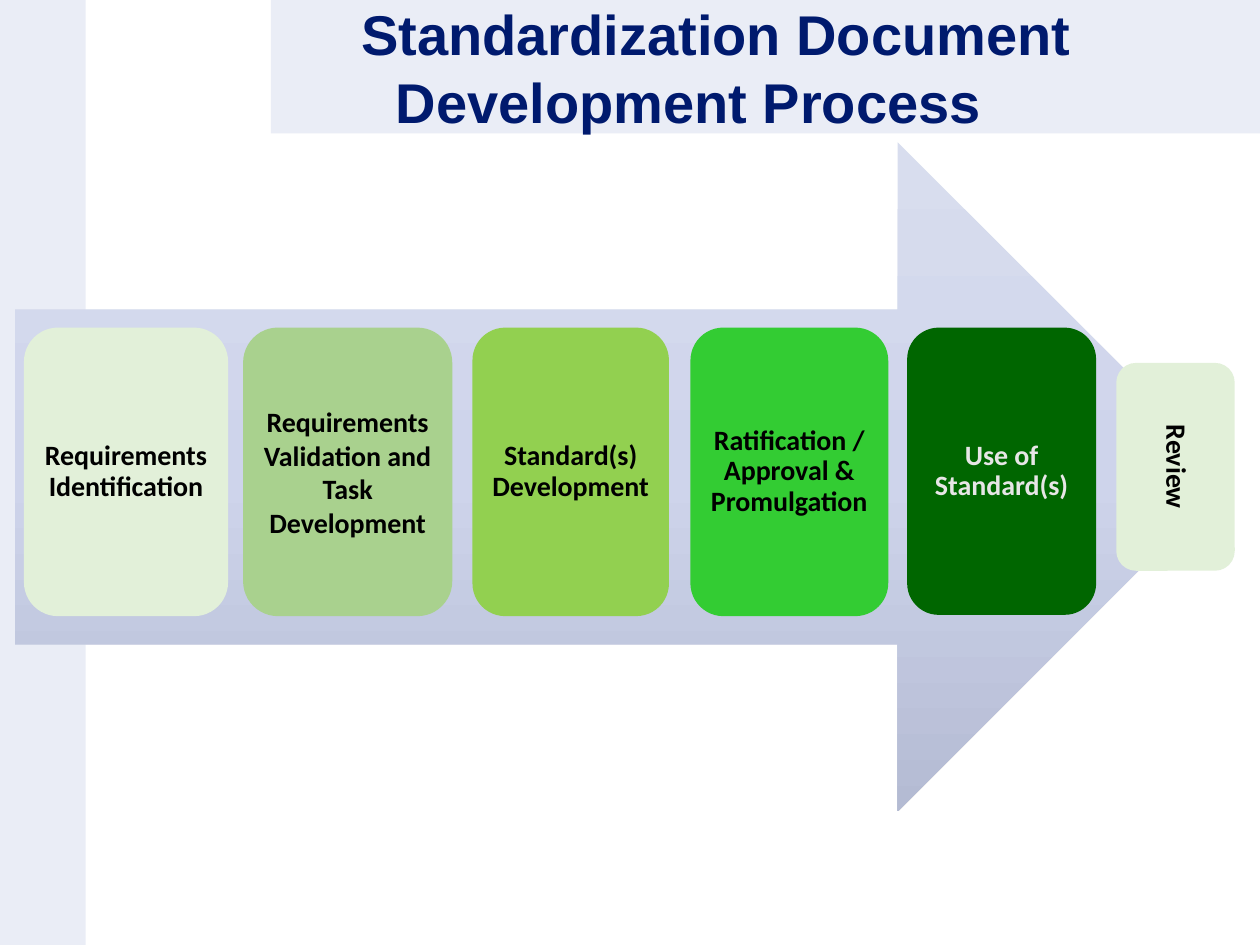
import copy

import pptx
import pptx.util
import pptx.dml.color
import pptx.enum.shapes
import pptx.enum.text

COLORS = {
    "band": "EAEDF6", "title": "001A6E", "dark": "000000", "light": "E7E6E6",
    "arrow_top": "D8DDEE", "arrow_mid": "CED4EB", "arrow_end": "B4BBD3",
    "pale": "E2F0D9", "sage": "A9D18E", "lime": "92D050",
    "green": "33CC33", "forest": "006600",
}
SHAPE = pptx.enum.shapes.MSO_SHAPE

prs = pptx.Presentation()
prs.slide_width = pptx.util.Inches(10)
prs.slide_height = pptx.util.Inches(7.5)
CELL = prs.slide_width // 100  # square grid: 100 columns by 75 rows
s = prs.slides.add_slide(prs.slide_layouts[6])


def add_block(kind, col, row, cols, rows, color):
    sp = s.shapes.add_shape(kind, *(round(n * CELL) for n in (col, row, cols, rows)))
    sp.shadow.inherit = False
    sp.line.fill.background()
    sp.fill.solid()
    sp.fill.fore_color.rgb = pptx.dml.color.RGBColor.from_string(COLORS[color])
    return sp


def set_text(tf, text, font, size, color):
    tf.word_wrap = True
    tf.text = text
    p = tf.paragraphs[0]
    p.alignment = pptx.enum.text.PP_ALIGN.CENTER
    for r in p.runs:
        r.font.name, r.font.size, r.font.bold = font, pptx.util.Pt(size), True
        r.font.color.rgb = pptx.dml.color.RGBColor.from_string(COLORS[color])
    return p


# Background bands
add_block(SHAPE.RECTANGLE, 0, 0, 6.8, 75, "band")
add_block(SHAPE.RECTANGLE, 21.5, 0, 78.5, 10.6, "band")

# Process arrow with a three-stop gradient, light at the top
arrow = add_block(SHAPE.RIGHT_ARROW, 1.2, 11.3, 96.6, 53.1, "arrow_mid")
arrow.fill.gradient()
arrow.fill.gradient_angle = 270
stop_list = arrow.fill._fill._gradFill.gsLst
stop_list.insert(1, copy.deepcopy(stop_list[0]))
arrow_stops = [(0, "arrow_top"), (0.5, "arrow_mid"), (1, "arrow_end")]
for stop, (position, color) in zip(arrow.fill.gradient_stops, arrow_stops):
    stop.position = position
    stop.color.rgb = pptx.dml.color.RGBColor.from_string(COLORS[color])

# Title: the first line sits a little to the right of the second
title = s.shapes.add_textbox(*(round(n * CELL) for n in (15.7, -0.5, 77.9, 11.8)))
p = set_text(title.text_frame, "Standardization Document Development Process",
             "Arial", 32, "title")
p._p.get_or_add_pPr().set("indent", str(round(4.4 * CELL)))

# Process steps: column, row, columns, rows, fill, text colour, line spacing, text
steps = [
    (1.9, 26, 16.2, 22.9, "pale", "dark", 0.9, "Requirements Identification"),
    (19.3, 26, 16.6, 22.9, "sage", "dark", 1.0,
     "Requirements Validation and Task Development"),
    (37.5, 26, 15.6, 22.9, "lime", "dark", 0.9, "Standard(s) Development"),
    (54.8, 26, 15.7, 22.9, "green", "dark", 0.9,
     "Ratification / Approval &\vPromulgation"),
    (72, 26, 15, 22.8, "forest", "light", 0.9, "Use of Standard(s)"),
    (88.6, 28.8, 9.4, 16.5, "pale", "dark", 0.9, "Review"),
]
for col, row, cols, rows, fill, color, spacing, text in steps:
    sp = add_block(SHAPE.ROUNDED_RECTANGLE, col, row, cols, rows, fill)
    tf = sp.text_frame
    tf.vertical_anchor = pptx.enum.text.MSO_ANCHOR.MIDDLE
    tf.margin_left = tf.margin_right = tf.margin_top = tf.margin_bottom = round(0.6 * CELL)
    set_text(tf, text, "Calibri", 16, color).line_spacing = spacing

# The last step, Review, reads downwards
tf._txBody.bodyPr.set("vert", "vert")

prs.save("out.pptx")
